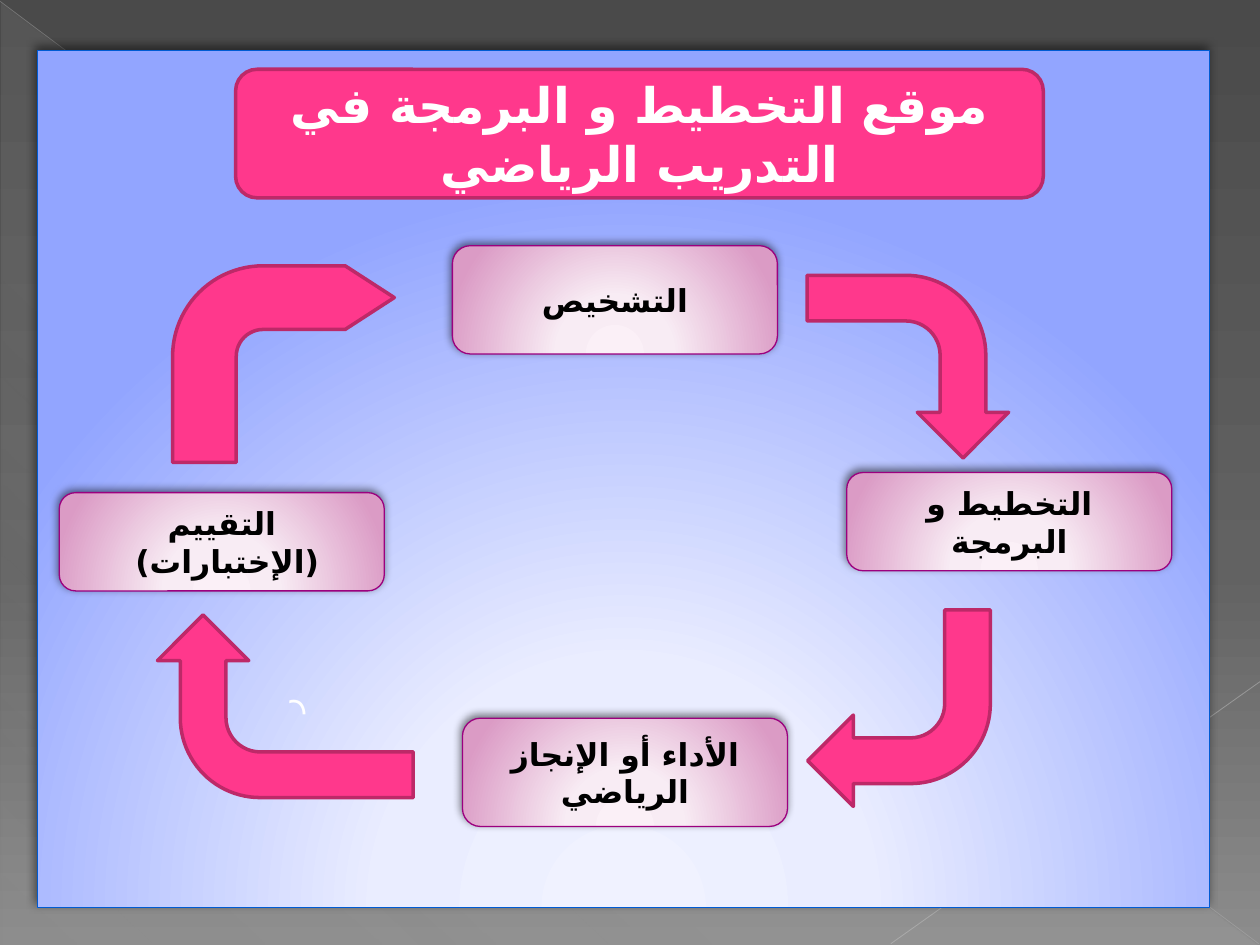
from lxml.etree import SubElement
from pptx import Presentation
from pptx.dml.color import RGBColor
from pptx.enum.shapes import MSO_CONNECTOR, MSO_SHAPE
from pptx.enum.text import MSO_ANCHOR, PP_ALIGN
from pptx.oxml.ns import qn
from pptx.util import Inches, Pt

FONT = "League Spartan"
ARABIC_FONT = "DejaVu Sans"
WHITE = RGBColor(0xFF, 0xFF, 0xFF)
BLACK = RGBColor(0x00, 0x00, 0x00)
PINK = RGBColor(0xFF, 0x38, 0x8C)
DARK_PINK = RGBColor(0xBD, 0x29, 0x68)
PURPLE = RGBColor(0x9C, 0x00, 0x7F)
BLUE = RGBColor(0x00, 0x5B, 0xD3)
SILVER = RGBColor(0xD2, 0xD2, 0xD2)
LINE_GREYS = RGBColor(0xBF, 0xBF, 0xBF), RGBColor(0xC6, 0xC6, 0xC6)

# Gradient stops: position, colour, opacity in percent
BACKDROP = [(0, RGBColor(0x4A, 0x4A, 0x4A), 100), (60, RGBColor(0x62, 0x62, 0x62), 100),
            (100, RGBColor(0x8C, 0x8C, 0x8C), 100)]
SHEEN = [(0, SILVER, 10), (70, SILVER, 8), (100, SILVER, 1)]
PANEL_GLOW = [(0, RGBColor(0xF0, 0xF2, 0xFF), 100), (34, RGBColor(0xEA, 0xED, 0xFF), 100),
              (100, RGBColor(0x92, 0xA5, 0xFF), 100)]
CARD_GLOW = [(0, RGBColor(0xFB, 0xF0, 0xF7), 100), (34, RGBColor(0xF8, 0xEC, 0xF4), 100),
             (100, RGBColor(0xDB, 0x9B, 0xC5), 100)]


def paint_gradient(fill, element, stops, angle=None):
    """Fill with a linear gradient at an angle, or a circular one without it."""
    fill.gradient()
    gradient = next(element.iter(qn("a:gradFill")))
    for child in list(gradient):
        gradient.remove(child)
    stop_list = SubElement(gradient, qn("a:gsLst"))
    for position, color, opacity in stops:
        stop = SubElement(stop_list, qn("a:gs"), pos=str(position * 1000))
        tint = SubElement(stop, qn("a:srgbClr"), val=str(color))
        if opacity < 100:
            SubElement(tint, qn("a:alpha"), val=str(opacity * 1000))
    if angle is None:
        circle = SubElement(gradient, qn("a:path"), path="circle")
        SubElement(circle, qn("a:fillToRect"), l="50000", t="155000", r="50000", b="-55000")
    else:
        SubElement(gradient, qn("a:lin"), ang=str(angle * 60000), scaled="0")


def write_text(shape, text, size=18, color=BLACK, bold=True):
    frame = shape.text_frame
    frame.word_wrap = True
    frame.vertical_anchor = MSO_ANCHOR.MIDDLE
    para = frame.paragraphs[0]
    para.alignment = PP_ALIGN.CENTER
    para._p.get_or_add_pPr().set("rtl", "1")
    span = para.add_run()
    span.text = text
    span.font.name = FONT
    span.font.size = Pt(size)
    span.font.bold = bold
    span.font.color.rgb = color
    SubElement(span.font._element, qn("a:cs"), typeface=ARABIC_FONT)


deck = Presentation()
deck.slide_width, deck.slide_height = Inches(10), Inches(7.5)
unit = deck.slide_width / 100  # square grid of 100 columns and 75 rows
page = deck.slides.add_slide(deck.slide_layouts[6])
shapes = page.shapes
paint_gradient(page.background.fill, page.element, BACKDROP, angle=90)

# Corner sheen and the thin diagonals
sheen = shapes.add_shape(MSO_SHAPE.RIGHT_TRIANGLE,
                         *[int(n * unit) for n in (0.1, 0.2, 99.8, 74.8)])
paint_gradient(sheen.fill, sheen.element, SHEEN, angle=133)
sheen.line.fill.background()
sheen.shadow.inherit = False

diagonals = [((0, 0.1, 99.9, 74.9), 0.39, 35), ((100, 54.1, 70.7, 74.9), 0.47, 45)]
for (ends, width, opacity), grey in zip(diagonals, LINE_GREYS):
    diagonal = shapes.add_connector(MSO_CONNECTOR.STRAIGHT, *[int(n * unit) for n in ends])
    diagonal.line.color.rgb = grey
    diagonal.line.width = Pt(width)
    tint = next(diagonal._element.spPr.iter(qn("a:srgbClr")))
    SubElement(tint, qn("a:alpha"), val=str(opacity * 1000))
    SubElement(diagonal._element.spPr, qn("a:effectLst"))

# Panel and the four stages of the cycle
outline = shapes.build_freeform(3.1, 3.9, scale=unit)
outline.add_line_segments([(96.1, 3.9), (96.1, 71.9), (3.1, 71.9)], close=True)
glowing_boxes = [(outline.convert_to_shape(), PANEL_GLOW, BLUE)]

stages = [
    ((35.9, 19.5, 25.8, 8.6), "التشخيص"),
    ((67.2, 37.5, 25.8, 7.8), "التخطيط و البرمجة"),
    ((4.7, 39.1, 25.8, 7.8), "التقييم (الإختبارات) "),
    ((36.7, 57, 25.8, 8.6), "الأداء أو الإنجاز الرياضي"),
]
for place, text in stages:
    card = shapes.add_shape(MSO_SHAPE.ROUNDED_RECTANGLE, *[int(n * unit) for n in place])
    write_text(card, text)
    glowing_boxes.append((card, CARD_GLOW, PURPLE))

for box, glow, edge in glowing_boxes:
    paint_gradient(box.fill, box.element, glow)
    box.line.color.rgb = edge
    box.line.width = Pt(0.75)
    box.shadow.inherit = False
    effects = box.element.spPr.find(qn("a:effectLst"))
    shadow = SubElement(effects, qn("a:outerShdw"), blurRad=str(Pt(5)), dist=str(Pt(2)),
                        dir=str(245 * 60000), algn="ctr", rotWithShape="0")
    SubElement(SubElement(shadow, qn("a:srgbClr"), val=str(BLACK)), qn("a:alpha"), val="50000")

# Title box and the bent arrows joining the stages:
# kind, place, rotation, adjustments, text, text size, bold
pink_shapes = [
    (MSO_SHAPE.ROUNDED_RECTANGLE, (18.7, 5.5, 64.1, 10.2), 0, (),
     "موقع التخطيط و البرمجة في التدريب الرياضي", 28, True),
    (MSO_SHAPE.BENT_ARROW, (64.8, 21.1, 14.5, 16), 90, (), "", 18, False),
    (MSO_SHAPE.BENT_ARROW, (15.4, 45.9, 14.5, 20.3), 270, (), "ر", 18, False),
    (MSO_SHAPE.BENT_ARROW, (13.7, 21.1, 17.6, 15.6), 0, (0.324, 0.162, 0.25, 0.461),
     "", 18, False),
    (MSO_SHAPE.BENT_ARROW, (64.1, 48.4, 14.5, 15.6), 180, (), "", 18, False),
]
for kind, place, rotation, adjustments, text, size, bold in pink_shapes:
    shape = shapes.add_shape(kind, *[int(n * unit) for n in place])
    shape.rotation = rotation
    for index, value in enumerate(adjustments):
        shape.adjustments[index] = value
    shape.fill.solid()
    shape.fill.fore_color.rgb = PINK
    shape.line.color.rgb = DARK_PINK
    shape.line.width = Pt(2)
    shape.shadow.inherit = False
    if text:
        write_text(shape, text, size=size, color=WHITE, bold=bold)

deck.save("out.pptx")
